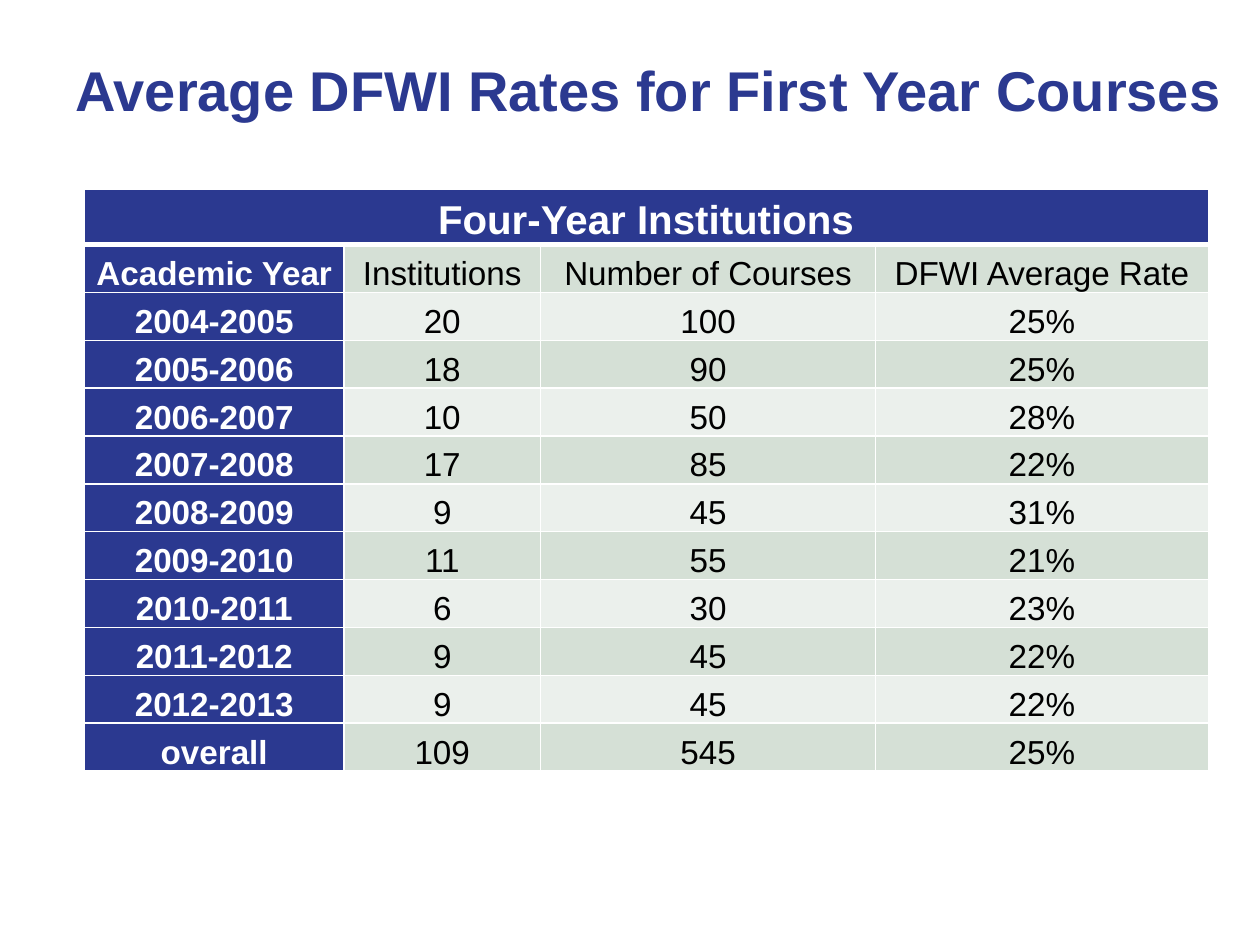
from collections import namedtuple

from lxml.etree import SubElement
from pptx import Presentation
from pptx.dml.color import RGBColor
from pptx.enum.text import MSO_ANCHOR as Anchor, PP_ALIGN as Align
from pptx.oxml.ns import qn
from pptx.util import Inches, Pt

NAVY = RGBColor(0x2B, 0x39, 0x90)
SAGE = RGBColor(0xD5, 0xE0, 0xD6)
PALE_SAGE = RGBColor(0xEB, 0xF0, 0xEC)
WHITE = RGBColor(0xFF, 0xFF, 0xFF)
BLACK = RGBColor(0x00, 0x00, 0x00)
FONT = "Arial"

# The slide is a grid of 100 columns by 75 rows of square units.
UNIT = Inches(0.1)
GRID_COLUMNS, GRID_ROWS = 100, 75
Box = namedtuple("Box", "left top width height")
TITLE_BOX = Box(5, 1.7, 95, 10.8)
TABLE_BOX = Box(6.7, 15, 89.2, 46.2)
HEADING_HEIGHT = 4.4
COLUMN_WIDTHS = (20.6, 15.6, 26.6, 26.4)

TITLE = "Average DFWI Rates for First Year Courses"
HEADING = "Four-Year Institutions"
RATES = (
    ("Academic Year", "Institutions", "Number of Courses", "DFWI Average Rate"),
    ("2004-2005", "20", "100", "25%"),
    ("2005-2006", "18", "90", "25%"),
    ("2006-2007", "10", "50", "28%"),
    ("2007-2008", "17", "85", "22%"),
    ("2008-2009", "9", "45", "31%"),
    ("2009-2010", "11", "55", "21%"),
    ("2010-2011", "6", "30", "23%"),
    ("2011-2012", "9", "45", "22%"),
    ("2012-2013", "9", "45", "22%"),
    ("overall", "109", "545", "25%"),
)


def units(count):
    return round(count * UNIT)


def place(box):
    return [units(length) for length in box]


def add_run(paragraph, text, size, color, bold):
    run = paragraph.add_run()
    run.text = text
    run.font.name = FONT
    run.font.size = Pt(size)
    run.font.bold = bold
    run.font.color.rgb = color


def set_borders(cell, **widths):
    """Draw white borders; keywords L, R, T and B give widths in points."""
    properties = cell._tc.get_or_add_tcPr()
    for position, side in enumerate("LRTB"):
        line = SubElement(properties, qn(f"a:ln{side}"), w=str(Pt(widths.get(side, 1))))
        fill = SubElement(line, qn("a:solidFill"))
        SubElement(fill, qn("a:srgbClr"), val=str(WHITE))
        properties.insert(position, line)


def style_cell(cell, fill, anchor, **border_widths):
    cell.fill.solid()
    cell.fill.fore_color.rgb = fill
    cell.vertical_anchor = anchor
    cell.margin_left = cell.margin_right = Inches(0.07)
    cell.margin_top = cell.margin_bottom = 0
    set_borders(cell, **border_widths)


def write_cell(cell, text, size, color, bold):
    paragraph = cell.text_frame.paragraphs[0]
    paragraph.alignment = Align.CENTER
    paragraph.line_spacing = 1.15
    add_run(paragraph, text, size, color, bold)


def add_title(slide, box):
    frame = slide.shapes.add_textbox(*place(box)).text_frame
    frame.word_wrap = True
    frame.vertical_anchor = Anchor.MIDDLE
    add_run(frame.paragraphs[0], TITLE, 32, NAVY, True)


def add_rates_table(slide, box):
    row_count, column_count = len(RATES) + 1, len(COLUMN_WIDTHS)
    table = slide.shapes.add_table(row_count, column_count, *place(box)).table
    for column, width in zip(table.columns, COLUMN_WIDTHS):
        column.width = units(width)
    row_height = (box.height - HEADING_HEIGHT) / len(RATES)
    for index, row in enumerate(table.rows):
        row.height = units(row_height if index else HEADING_HEIGHT)

    for cell in table.rows[0].cells:
        style_cell(cell, NAVY, Anchor.MIDDLE, B=3)
    table.cell(0, 0).merge(table.cell(0, column_count - 1))
    write_cell(table.cell(0, 0), HEADING, 23, WHITE, True)

    for row_index, values in enumerate(RATES, start=1):
        band = SAGE if row_index % 2 else PALE_SAGE
        for column_index, value in enumerate(values):
            cell = table.cell(row_index, column_index)
            is_label = column_index == 0
            style_cell(cell, NAVY if is_label else band, Anchor.BOTTOM,
                       T=3 if row_index == 1 else 1)
            write_cell(cell, value, 19, WHITE if is_label else BLACK, is_label)


def main():
    presentation = Presentation()
    presentation.slide_width = units(GRID_COLUMNS)
    presentation.slide_height = units(GRID_ROWS)
    slide = presentation.slides.add_slide(presentation.slide_layouts[6])
    add_title(slide, TITLE_BOX)
    add_rates_table(slide, TABLE_BOX)
    presentation.save("out.pptx")


if __name__ == "__main__":
    main()
